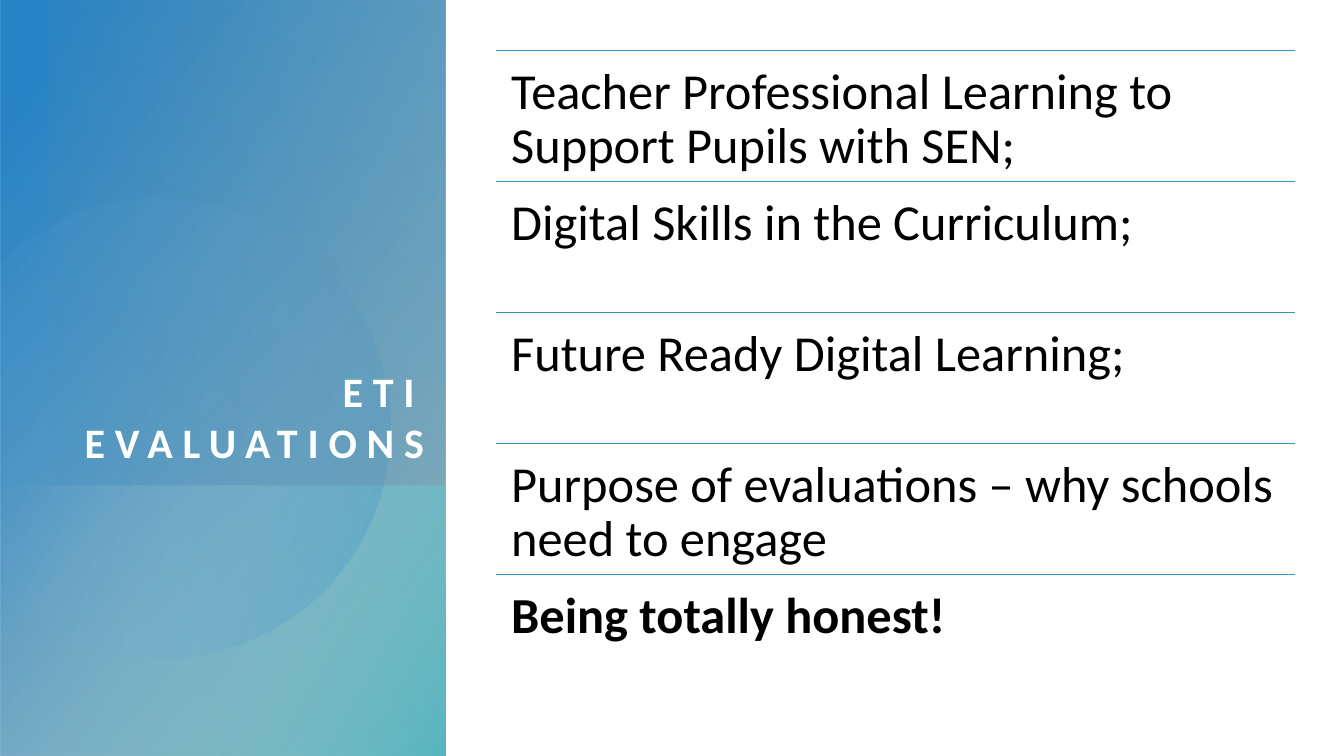
from dataclasses import dataclass

from lxml import etree
from pptx import Presentation
from pptx import util as u
from pptx.dml.color import RGBColor
from pptx.enum import shapes, text
from pptx.oxml.ns import qn

WHITE = RGBColor(0xFF, 0xFF, 0xFF)
BLACK = RGBColor(0x00, 0x00, 0x00)
RULE_BLUE = RGBColor(0x34, 0x94, 0xBA)
BLUE = RGBColor(0x26, 0x83, 0xC6)
SKY = RGBColor(0x75, 0xB6, 0xE5)
STEEL = RGBColor(0x84, 0xAC, 0xB6)
MIST = RGBColor(0xB5, 0xCD, 0xD3)
SLATE = RGBColor(0x7A, 0x8C, 0x8E)
TEAL = RGBColor(0x58, 0xB6, 0xC0)
FONT = "Calibri"


@dataclass(frozen=True)
class Stop:
    position: int
    color: RGBColor
    opacity: int = 100


@dataclass(frozen=True)
class Panel:
    left: float
    top: float
    width: float
    height: float
    rotation: int
    angle: int
    stops: tuple[Stop, ...]


@dataclass(frozen=True)
class Item:
    wording: str
    bold: bool = False


BASE_PANEL = Panel(-1.54, 1.54, 7.5, 4.42, 270, 50,
                   (Stop(8, BLUE), Stop(100, STEEL, 89)))
LOWER_PANEL = Panel(0.86, 3.95, 2.69, 4.42, 270, 60,
                    (Stop(0, MIST, 0), Stop(99, TEAL)))
UPPER_PANEL = Panel(0.05, 0.45, 4.81, 3.92, 90, 110,
                    (Stop(0, STEEL, 29), Stop(100, SLATE, 0)))

# Disc cut off by the left edge: a start point, then Bezier curves
DISC_START = (1.64, 1.96)
DISC_RIGHT = (
    ((2.61, 1.98), (3.5, 2.63), (3.78, 3.62)),
    ((4.13, 4.83), (3.43, 6.1), (2.22, 6.44)),
    ((1.46, 6.66), (0.68, 6.47), (0.12, 6)),
)
DISC_EDGE = ((0, 5.89), (0, 2.61), (0.15, 2.47))
DISC_TOP = (
    ((0.38, 2.29), (0.65, 2.14), (0.95, 2.05)),
    ((1.18, 1.99), (1.41, 1.96), DISC_START),
)
DISC_STOPS = (Stop(36, SKY, 6), Stop(100, BLUE, 26))

ITEMS = (
    Item("Teacher Professional Learning to Support Pupils with SEN;"),
    Item("Digital Skills in the Curriculum;"),
    Item("Future Ready Digital Learning;"),
    Item("Purpose of evaluations – why schools need to engage"),
    Item("Being totally honest!", bold=True),
)
LIST_LEFT, LIST_TOP, LIST_WIDTH, ROW_HEIGHT = 4.92, 0.5, 7.92, 1.3


def fill_gradient(sp, stops: tuple[Stop, ...], angle: int) -> None:
    sp.shadow.inherit = False
    sp.line.fill.background()
    sp.fill.background()
    sp_pr = sp.element.spPr
    grad = etree.Element(qn("a:gradFill"), rotWithShape="1")
    gs_list = etree.SubElement(grad, qn("a:gsLst"))
    for stop in stops:
        gs = etree.SubElement(gs_list, qn("a:gs"), pos=str(stop.position * 1000))
        color = etree.SubElement(gs, qn("a:srgbClr"), val=str(stop.color))
        etree.SubElement(color, qn("a:alpha"), val=str(stop.opacity * 1000))
    etree.SubElement(grad, qn("a:lin"), ang=str(angle * 60000), scaled="0")
    sp_pr.replace(sp_pr.find(qn("a:noFill")), grad)


def add_panel(s, panel: Panel):
    sp = s.shapes.add_shape(
        shapes.MSO_SHAPE.RECTANGLE, u.Inches(panel.left), u.Inches(panel.top),
        u.Inches(panel.width), u.Inches(panel.height))
    sp.rotation = panel.rotation
    sp.element.spPr.find(qn("a:xfrm")).set("flipH", "1")
    fill_gradient(sp, panel.stops, panel.angle)
    return sp


def trace_curves(start: tuple, curves: tuple, steps: int = 16) -> list[tuple]:
    points = []
    for c1, c2, end in curves:
        for step in range(1, steps + 1):
            t = step / steps
            v = 1 - t
            points.append(tuple(
                v**3 * a + 3 * v * v * t * b + 3 * v * t * t * c + t**3 * d
                for a, b, c, d in zip(start, c1, c2, end)))
        start = end
    return points


def add_disc(s) -> None:
    outline = (trace_curves(DISC_START, DISC_RIGHT) + list(DISC_EDGE)
               + trace_curves(DISC_EDGE[-1], DISC_TOP))
    builder = s.shapes.build_freeform(*map(u.Inches, DISC_START))
    builder.add_line_segments([(u.Inches(x), u.Inches(y)) for x, y in outline])
    fill_gradient(builder.convert_to_shape(), DISC_STOPS, 14)


def add_run(p, wording: str, size: int, color: RGBColor, bold: bool):
    r = p.add_run()
    r.text = wording
    r.font.name = FONT
    r.font.size = u.Pt(size)
    r.font.bold = bold
    r.font.color.rgb = color
    return r


def set_frame(tf, margin: float, anchor) -> None:
    tf.word_wrap = True
    tf.auto_size = text.MSO_AUTO_SIZE.NONE
    tf.vertical_anchor = anchor
    tf.margin_left = tf.margin_right = u.Inches(margin)
    tf.margin_top = tf.margin_bottom = u.Inches(margin)


def format_title(title) -> None:
    title.left, title.top = u.Inches(0.5), u.Inches(0.95)
    title.width, title.height = u.Inches(3.71), u.Inches(3.68)
    set_frame(title.text_frame, 0, text.MSO_ANCHOR.BOTTOM)
    p = title.text_frame.paragraphs[0]
    p.alignment = text.PP_ALIGN.RIGHT
    p.line_spacing = 1.0
    r = add_run(p, "ETI EVALUATIONS", 30, WHITE, True)
    r.font._element.set("spc", "700")


def add_item(s, item: Item, top: float) -> None:
    rule = s.shapes.add_connector(
        shapes.MSO_CONNECTOR.STRAIGHT, u.Inches(LIST_LEFT), u.Inches(top),
        u.Inches(LIST_LEFT + LIST_WIDTH), u.Inches(top))
    rule.line.color.rgb = RULE_BLUE
    rule.line.width = u.Pt(1)
    etree.SubElement(rule.element.spPr, qn("a:effectLst"))

    box = s.shapes.add_textbox(u.Inches(LIST_LEFT), u.Inches(top),
                               u.Inches(LIST_WIDTH), u.Inches(ROW_HEIGHT))
    set_frame(box.text_frame, 0.15, text.MSO_ANCHOR.TOP)
    p = box.text_frame.paragraphs[0]
    p.line_spacing = 0.9
    add_run(p, item.wording, 36, BLACK, item.bold)


def main() -> None:
    prs = Presentation()
    prs.slide_width, prs.slide_height = u.Inches(13.33), u.Inches(7.5)
    s = prs.slides.add_slide(prs.slide_layouts.get_by_name("Title Only"))

    # Left side: layered gradients
    add_panel(s, BASE_PANEL)
    add_panel(s, LOWER_PANEL)
    add_disc(s)
    top_panel = add_panel(s, UPPER_PANEL)

    # Title in front of the gradients
    title = s.shapes.title
    format_title(title)
    top_panel.element.addnext(title.element)

    # Right side: ruled list
    for row, item in enumerate(ITEMS):
        add_item(s, item, LIST_TOP + row * ROW_HEIGHT)

    prs.save("out.pptx")


if __name__ == "__main__":
    main()
